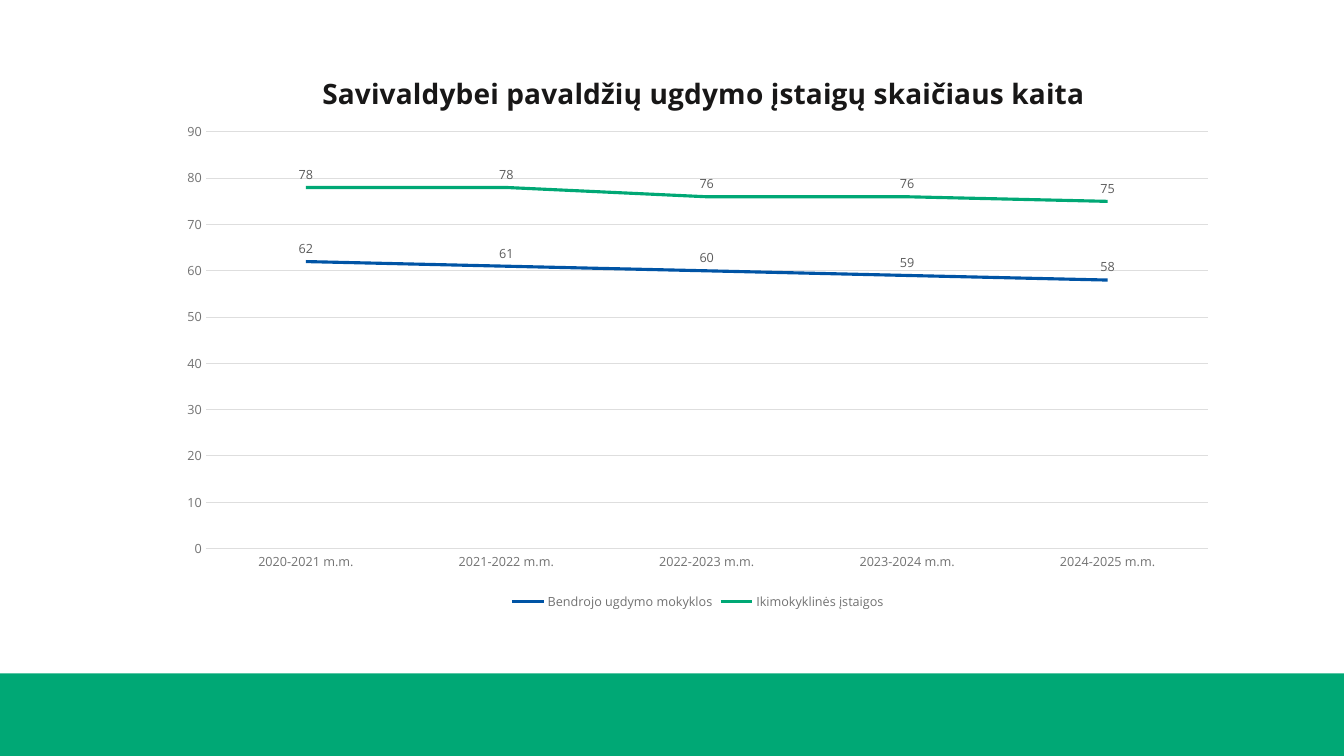
from lxml.etree import SubElement
from pptx import Presentation
from pptx.chart.data import CategoryChartData
from pptx.dml.color import RGBColor
from pptx.enum.chart import XL_CHART_TYPE, XL_LABEL_POSITION, XL_LEGEND_POSITION, XL_TICK_MARK
from pptx.enum.shapes import MSO_SHAPE
from pptx.oxml import parse_xml
from pptx.oxml.ns import nsdecls, qn
from pptx.util import Inches, Pt

GREEN = RGBColor(0x00, 0xA8, 0x75)
BLUE = RGBColor(0x00, 0x54, 0xA5)
INK = RGBColor(0x18, 0x17, 0x17)
DARK = RGBColor(0x26, 0x26, 0x26)
GRAY = RGBColor(0x72, 0x72, 0x72)
LABEL = RGBColor(0x5C, 0x5C, 0x5C)
GRID = RGBColor(0xDE, 0xDE, 0xDE)


def style(text, size=9, color=GRAY, bold=False):
    font = text.font
    font.name = "Open Sans"
    font.size = Pt(size)
    font.bold = bold
    font.color.rgb = color


def place(element, **fractions):
    layout = element.find(qn("c:layout"))
    if layout is None:
        layout = parse_xml(f"<c:layout {nsdecls('c')}/>")
        element.insert(0, layout)
    manual = SubElement(layout, qn("c:manualLayout"))
    if "w" in fractions:
        SubElement(manual, qn("c:layoutTarget")).set("val", "inner")
    for tag in ("xMode", "yMode"):
        SubElement(manual, qn(f"c:{tag}")).set("val", "edge")
    for tag, value in fractions.items():
        SubElement(manual, qn(f"c:{tag}")).set("val", str(value))


prs = Presentation()
prs.slide_width = Inches(13.33)
prs.slide_height = Inches(7.5)
s = prs.slides.add_slide(prs.slide_layouts[6])

band = s.shapes.add_shape(MSO_SHAPE.RECTANGLE, 0, Inches(6.68), prs.slide_width, Inches(0.82))
band.shadow.inherit = False
band.fill.solid()
band.fill.fore_color.rgb = GREEN
band.line.fill.background()

data = CategoryChartData()
data.categories = [f"{year}-{year + 1} m.m." for year in range(2020, 2025)]
data.add_series("Bendrojo ugdymo mokyklos", (62, 61, 60, 59, 58))
data.add_series("Ikimokyklinės įstaigos", (78, 78, 76, 76, 75))
chart = s.shapes.add_chart(
    XL_CHART_TYPE.LINE, Inches(1.65), Inches(0.39), Inches(10.54), Inches(5.71), data
).chart
style(chart, size=10, color=DARK)

p = chart.chart_title.text_frame.paragraphs[0]
r = p.add_run()
r.text = "Savivaldybei pavaldžių ugdymo įstaigų skaičiaus kaita"
style(r, size=20, color=INK, bold=True)
place(chart.chart_title.element, x=0.142, y=0.046)
place(chart.element.find(".//" + qn("c:plotArea")), x=0.037, y=0.161, w=0.943, h=0.724)

chart.has_legend = True
chart.legend.position = XL_LEGEND_POSITION.BOTTOM
chart.legend.include_in_layout = False
style(chart.legend)

for axis in (chart.category_axis, chart.value_axis):
    axis.major_tick_mark = axis.minor_tick_mark = XL_TICK_MARK.NONE
    style(axis.tick_labels)

values = chart.value_axis
values.minimum_scale = 0
values.maximum_scale = 90
values.major_unit = 10
values.format.line.fill.background()
values.has_major_gridlines = True
for line in (chart.category_axis.format.line, values.major_gridlines.format.line):
    line.color.rgb = GRID
    line.width = Pt(0.75)

plot = chart.plots[0]
plot.vary_by_categories = False
for series, color in zip(plot.series, (BLUE, GREEN)):
    series.smooth = False
    series.format.line.color.rgb = color
    series.format.line.width = Pt(2.25)
    labels = series.data_labels
    labels.show_value = True
    labels.position = XL_LABEL_POSITION.ABOVE
    style(labels, color=LABEL)

prs.save("out.pptx")
